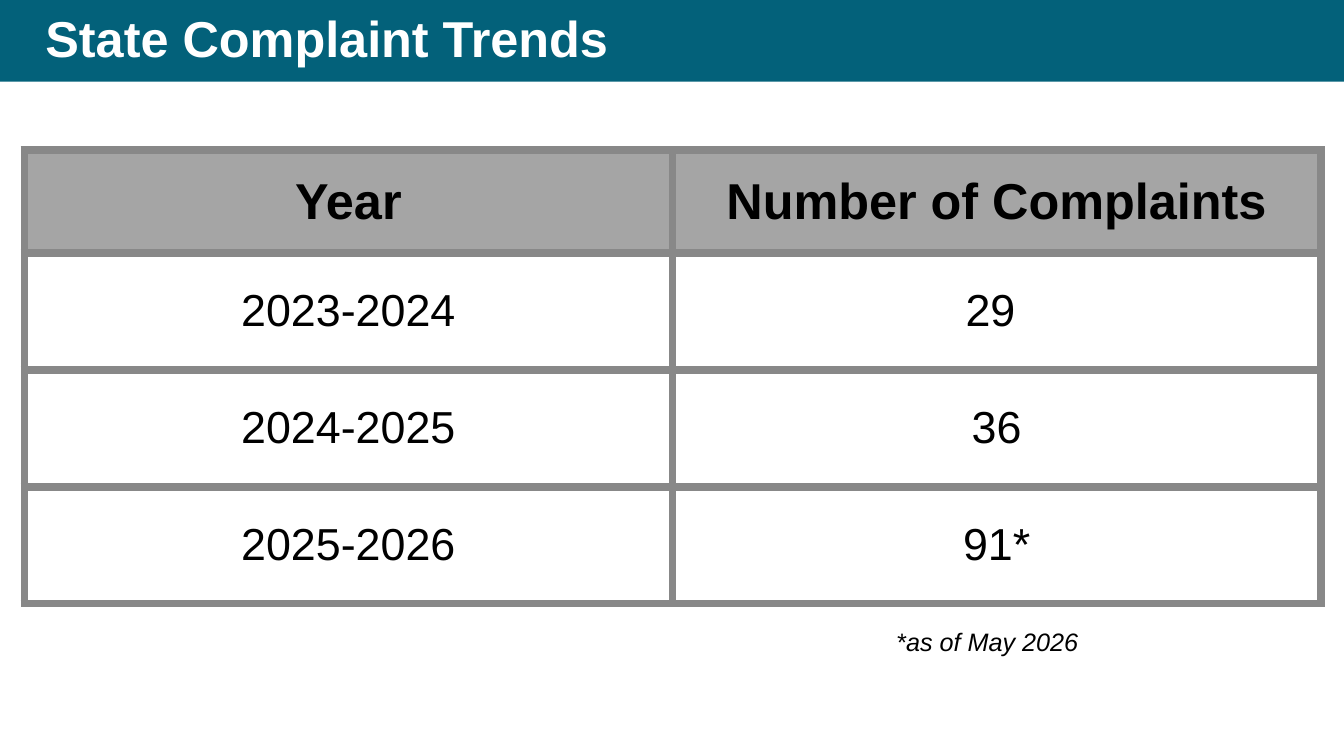
"""Build the State Complaint Trends slide."""
from lxml.etree import SubElement
from pptx import Presentation
from pptx.dml.color import RGBColor
from pptx.enum.shapes import MSO_SHAPE
from pptx.enum.text import MSO_ANCHOR, MSO_AUTO_SIZE, PP_ALIGN
from pptx.oxml.ns import qn
from pptx.util import Inches, Pt

TEAL, GRAY, BORDER, WHITE, BLACK = "03617A", "A5A5A5", "888888", "FFFFFF", "000000"
ROWS = [
    ("Year", "Number of Complaints"),
    ("2023-2024", "29 "),
    ("2024-2025", "36"),
    ("2025-2026", "91*"),
]


def color(value):
    return RGBColor.from_string(value)


def add_text(paragraph, text, size, text_color=BLACK, bold=False, italic=False):
    run = paragraph.add_run()
    run.text = text
    run.font.name = "Arial"
    run.font.size = Pt(size)
    run.font.bold = bold
    run.font.italic = italic
    run.font.color.rgb = color(text_color)


presentation = Presentation()
presentation.slide_width = Inches(13.33)
presentation.slide_height = Inches(7.5)
slide = presentation.slides.add_slide(presentation.slide_layouts[5])

band = slide.shapes.add_shape(MSO_SHAPE.RECTANGLE, 0, 0, Inches(13.33), Inches(0.81))
band.shadow.inherit = False
band.fill.solid()
band.fill.fore_color.rgb = color(TEAL)
band.line.fill.background()

title = slide.shapes.title
title.left, title.top = Inches(0.35), Inches(0)
title.width, title.height = Inches(12.32), Inches(0.81)
title.text_frame.vertical_anchor = MSO_ANCHOR.MIDDLE
title.text_frame.auto_size = MSO_AUTO_SIZE.NONE
paragraph = title.text_frame.paragraphs[0]
paragraph.alignment = PP_ALIGN.LEFT
paragraph.line_spacing = 0.9
add_text(paragraph, "State Complaint Trends", 36, WHITE, bold=True)
title._element.addprevious(band._element)

table = slide.shapes.add_table(
    4, 2, Inches(0.24), Inches(1.49), Inches(12.86), Inches(4.5)).table
table.horz_banding = False
for column in table.columns:
    column.width = Inches(6.43)

for index, (row, values) in enumerate(zip(table.rows, ROWS)):
    header = index == 0
    row.height = Inches(1.02 if header else 1.16)
    for cell, value in zip(row.cells, values):
        cell.vertical_anchor = MSO_ANCHOR.MIDDLE
        cell.margin_left = cell.margin_right = Inches(0.1)
        cell.margin_top = cell.margin_bottom = Inches(0.1)
        properties = cell._tc.get_or_add_tcPr()
        for side in ("lnL", "lnR", "lnT", "lnB"):
            line = SubElement(properties, qn(f"a:{side}"), w=str(Pt(6)))
            fill = SubElement(line, qn("a:solidFill"))
            SubElement(fill, qn("a:srgbClr"), val=BORDER)
        cell.fill.solid()
        cell.fill.fore_color.rgb = color(GRAY if header else WHITE)
        paragraph = cell.text_frame.paragraphs[0]
        paragraph.alignment = PP_ALIGN.CENTER
        add_text(paragraph, value, 36 if header else 32, bold=header)

footnote = slide.shapes.add_textbox(Inches(8.79), Inches(6.11), Inches(2.11), Inches(0.5))
frame = footnote.text_frame
frame.word_wrap = True
frame.auto_size = MSO_AUTO_SIZE.SHAPE_TO_FIT_TEXT
frame.margin_left = frame.margin_right = Inches(0.1)
frame.margin_top = frame.margin_bottom = Inches(0.1)
add_text(frame.paragraphs[0], "*as of May 2026", 18, italic=True)

presentation.save("out.pptx")
